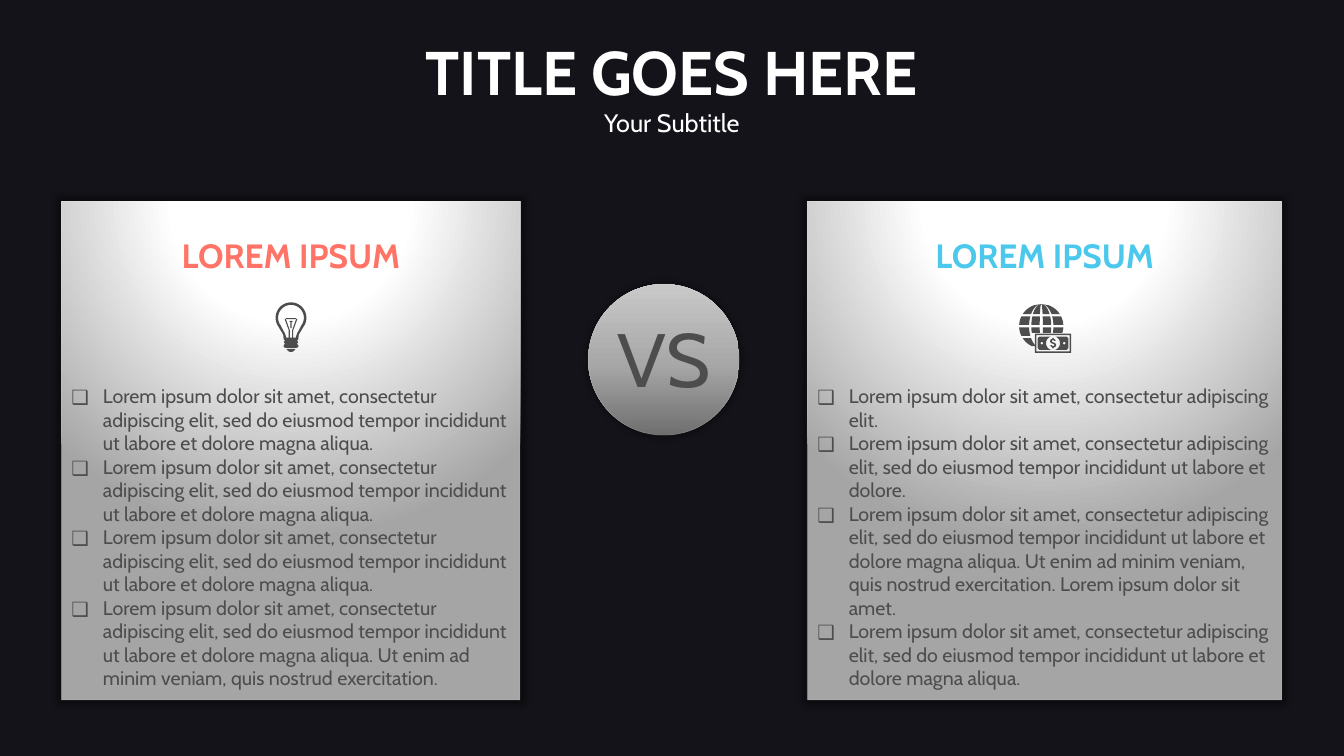
import math

import lxml.etree
import pptx
import pptx.dml.color
import pptx.enum.shapes
import pptx.enum.text
import pptx.oxml
import pptx.oxml.ns
import pptx.util

Pt = pptx.util.Pt
qn = pptx.oxml.ns.qn
CENTER = pptx.enum.text.PP_ALIGN.CENTER
RECTANGLE = pptx.enum.shapes.MSO_SHAPE.RECTANGLE
FONT = "Cabin"
GREY = "4D4D4D"
WHITE = "FFFFFF"
CARD_TOP, CARD_HEIGHT = 144, 356
RADIAL = '<a:path path="circle"><a:fillToRect l="50000" t="-80000" r="50000" b="180000"/></a:path>'
UPWARD = '<a:lin ang="16200000" scaled="0"/>'
SENTENCE = "Lorem ipsum dolor sit amet, consectetur adipiscing elit"
TEMPOR = SENTENCE + ", sed do eiusmod tempor incididunt ut labore et dolore"
ALIQUA = TEMPOR + " magna aliqua."
VENIAM = ALIQUA + " Ut enim ad minim veniam, quis nostrud exercitation."


def color(value):
    """Return the colour for a hex string."""
    return pptx.dml.color.RGBColor.from_string(value)


def set_opacity(element, percent):
    """Set the opacity of the first colour inside an element."""
    lxml.etree.SubElement(element.find(".//" + qn("a:srgbClr")), qn("a:alpha")).set("val", str(percent * 1000))


def format_paragraph(paragraph, size, value, bold=False, alignment=None):
    """Set alignment of a paragraph and the font of its runs."""
    paragraph.alignment = alignment
    for run in paragraph.runs:
        run.font.name = FONT
        run.font.size = Pt(size)
        run.font.bold = bold
        run.font.color.rgb = color(value)


def add_text(slide, box, lines, size, value, bold=False, alignment=None):
    """Add a wrapped text box and return its paragraphs."""
    frame = slide.shapes.add_textbox(*map(Pt, box)).text_frame
    frame.word_wrap = True
    frame.text = "\n".join(lines)
    for paragraph in frame.paragraphs:
        format_paragraph(paragraph, size, value, bold, alignment)
    return frame.paragraphs


def add_bullet(paragraph):
    """Give a paragraph a hanging box bullet."""
    properties = paragraph._p.get_or_add_pPr()
    properties.set("marL", str(Pt(22.5)))
    properties.set("indent", str(-Pt(22.5)))
    lxml.etree.SubElement(properties, qn("a:buFont")).set("typeface", "Noto Sans Symbols")
    lxml.etree.SubElement(properties, qn("a:buChar")).set("char", "❑")


def add_backdrop(slide):
    """Darken the slide background with a translucent rectangle."""
    slide.background.fill.solid()
    slide.background.fill.fore_color.rgb = color("524E67")
    shape = slide.shapes.add_shape(RECTANGLE, 0, 0, Pt(960), Pt(540))
    shape.fill.solid()
    shape.fill.fore_color.rgb = color("000000")
    set_opacity(shape.element.spPr, 75)
    shape.line.fill.background()
    shape.shadow.inherit = False
    slide.shapes._spTree.insert(2, shape.element)


def add_panel(slide, kind, box, stops, direction):
    """Add a shape with gradient, faint outline and soft shadow."""
    shape = slide.shapes.add_shape(kind, *map(Pt, box))
    shape.fill.solid()
    solid = shape.element.spPr.find(qn("a:solidFill"))
    stop_xml = "".join(
        f'<a:gs pos="{position * 1000}"><a:srgbClr val="{value}"/></a:gs>'
        for position, value in stops
    )
    namespace = pptx.oxml.ns.nsdecls("a")
    gradient = pptx.oxml.parse_xml(
        f'<a:gradFill {namespace} rotWithShape="1"><a:gsLst>{stop_xml}</a:gsLst>{direction}</a:gradFill>'
    )
    solid.getparent().replace(solid, gradient)
    shape.line.width = Pt(0.5)
    shape.line.color.rgb = color(WHITE)
    set_opacity(shape.element.spPr.find(qn("a:ln")), 15)
    shape.shadow.inherit = False
    shape.element.spPr.find(qn("a:effectLst")).append(pptx.oxml.parse_xml(
        f'<a:outerShdw {namespace} blurRad="{Pt(5)}" sx="102000" sy="102000" algn="ctr" rotWithShape="0">'
        '<a:srgbClr val="000000"><a:alpha val="40000"/></a:srgbClr></a:outerShdw>'
    ))


def add_card(slide, left, width, heading, accent, items):
    """Add one side of the comparison."""
    add_panel(slide, RECTANGLE, (left, CARD_TOP, width, CARD_HEIGHT),
              [(0, WHITE), (35, WHITE), (100, "A5A5A5")], RADIAL)
    add_text(slide, (left, 164.2, width, 36), [heading], 24, accent, True, CENTER)
    for paragraph in add_text(slide, (left, 270.7, width, 227.6), items, 14, GREY):
        add_bullet(paragraph)


def add_icon(slide, parts):
    """Draw each part as a freeform, with its inner contours as holes."""
    for contours in parts:
        outlines = [[(Pt(x), Pt(y)) for x, y in contour] for contour in contours]
        builder = slide.shapes.build_freeform(*outlines[0][0])
        for index, outline in enumerate(outlines):
            if index:
                builder.move_to(*outline[0])
            builder.add_line_segments(outline[1:], close=True)
        shape = builder.convert_to_shape()
        shape.fill.solid()
        shape.fill.fore_color.rgb = color(GREY)
        shape.line.fill.background()
        shape.shadow.inherit = False


def arc(x, y, radius, start=0, end=360):
    """Return points along an arc, with angles clockwise from the right."""
    angles = [math.radians(start + (end - start) * step / 24) for step in range(25)]
    return [(x + radius * math.cos(angle), y + radius * math.sin(angle)) for angle in angles]


def rectangle(left, top, right, bottom):
    """Return the corners of a rectangle."""
    return [(left, top), (right, top), (right, bottom), (left, bottom)]


def bulb_parts(center):
    """Return the light bulb from mirrored half profiles."""
    glass = [
        arc(0, 227, 11, -90, 35) + [
            (5.6, 239), (5.2, 242.4), (4.3, 243.4), (5.2, 244.4),
            (4.3, 245.6), (5.2, 246.8), (5.2, 248), (3.5, 248.6)],
        arc(0, 227, 9.2, -90, 35) + [(4.2, 238.5), (3.4, 241.2)],
        [(4.6, 227.8), (1.6, 236), (1.6, 241.2)],
        [(3.7, 227.8), (0.8, 236), (0.8, 241.2)],
        [(0.4, 230.4), (0.4, 234.5)],
    ]
    bar = [[(3.5, 227.2), (3.7, 227.6), (3.5, 228)]]
    knob = [[(0.7, 229.2), (1.2, 229.7), (0.7, 230.2)]]
    tip = [[(3.2, 249.3), (2, 250.8), (0.8, 251.4)]]
    return [
        [[(center + x, y) for x, y in half] + [(center - x, y) for x, y in reversed(half)]
         for half in profiles]
        for profiles in (glass, tip, knob, bar)
    ]


def globe_parts(center_x, center_y, radius):
    """Return globe cells between meridians and parallels, cut off by the banknote."""
    columns = [(-1, -0.55), (-0.45, -0.07), (0.07, 0.45), (0.55, 1)]
    rows = [(-15.8, -8.6), (-7, -0.9), (0.9, 7), (8.6, 14.2)]
    cells = []
    for column, sides in enumerate(columns):
        for row, (top, bottom) in enumerate(rows):
            if column and row == 3:
                continue
            if column and row == 2:
                bottom = 4.8
            heights = [top + (bottom - top) * step / 8 for step in range(9)]
            edges = [
                [(center_x + side * math.sqrt(max(radius ** 2 - y ** 2, 0)), center_y + y)
                 for y in heights]
                for side in sides
            ]
            cells.append([edges[0] + edges[1][::-1]])
    return cells


def banknote_parts(left, top):
    """Return the banknote frame, its two halves and the dollar sign."""
    x, y = left + 12.9, top + 6.85
    dollar = [
        (-0.5, -3.8), (0.5, -3.8), (0.5, -3.2), (2.1, -1.9), (1, -1.6), (0.3, -2.1),
        (-0.7, -2), (-1, -1.3), (-0.4, -0.7), (1.2, -0.2), (2.2, 0.8), (2, 2.3),
        (0.5, 3.2), (0.5, 3.8), (-0.5, 3.8), (-0.5, 3.2), (-2.2, 1.7), (-1.1, 1.4),
        (-0.4, 2), (0.7, 1.9), (1, 1.2), (0.4, 0.6), (-1.2, 0.1), (-2.1, -0.9),
        (-1.9, -2.4), (-0.5, -3.2)]
    half = arc(0, 0, 5, -72, 72) + [(9.8, 4.75), (11, 3.4), (11, -3.4), (9.8, -4.75)]
    halves = [
        [[(x + side * dx, y + dy) for dx, dy in contour] for contour in (half, arc(8, 0, 0.9))]
        for side in (-1, 1)
    ]
    frame = [
        rectangle(left, top, left + 25.8, top + 13.7),
        rectangle(left + 1, top + 1, left + 24.8, top + 12.7),
    ]
    return [[[(x + dx, y + dy) for dx, dy in dollar]], frame, *halves]


def set_title(slide, title, subtitle):
    """Place the title placeholder with its subtitle line."""
    shape = slide.shapes.title
    shape.left, shape.top, shape.width, shape.height = map(Pt, (263.2, 20.5, 433.4, 82.1))
    frame = shape.text_frame
    frame.text = title + "\n" + subtitle
    frame.word_wrap = True
    frame.auto_size = pptx.enum.text.MSO_AUTO_SIZE.NONE
    frame.vertical_anchor = pptx.enum.text.MSO_ANCHOR.TOP
    format_paragraph(frame.paragraphs[0], 44, WHITE, True, CENTER)
    format_paragraph(frame.paragraphs[1], 18, WHITE, False, CENTER)


def main():
    """Build and save the comparison slide."""
    presentation = pptx.Presentation()
    presentation.slide_width, presentation.slide_height = Pt(960), Pt(540)
    slide = presentation.slides.add_slide(presentation.slide_layouts[5])
    add_backdrop(slide)
    set_title(slide, "TITLE GOES HERE", "Your Subtitle")
    add_card(slide, 43.9, 327.6, "LOREM IPSUM", "FF7467", [ALIQUA, ALIQUA, ALIQUA, VENIAM])
    add_card(slide, 576.7, 338.9, "LOREM IPSUM", "4CC8EC", [
        SENTENCE + ".", TEMPOR + ".", VENIAM + " Lorem ipsum dolor sit amet.", ALIQUA])
    add_icon(slide, bulb_parts(207.9))
    add_icon(slide, banknote_parts(739.3, 238.3) + globe_parts(743.8, 233, 15.8))
    add_panel(slide, pptx.enum.shapes.MSO_SHAPE.OVAL, (420.2, 203, 108, 108),
              [(0, "6F6F6F"), (48, "A8A8A8"), (100, "C9C9C9")], UPWARD)
    add_text(slide, (402.4, 219.6, 144, 74.9), ["VS"], 54, GREY, False, CENTER)
    presentation.save("out.pptx")


if __name__ == "__main__":
    main()
